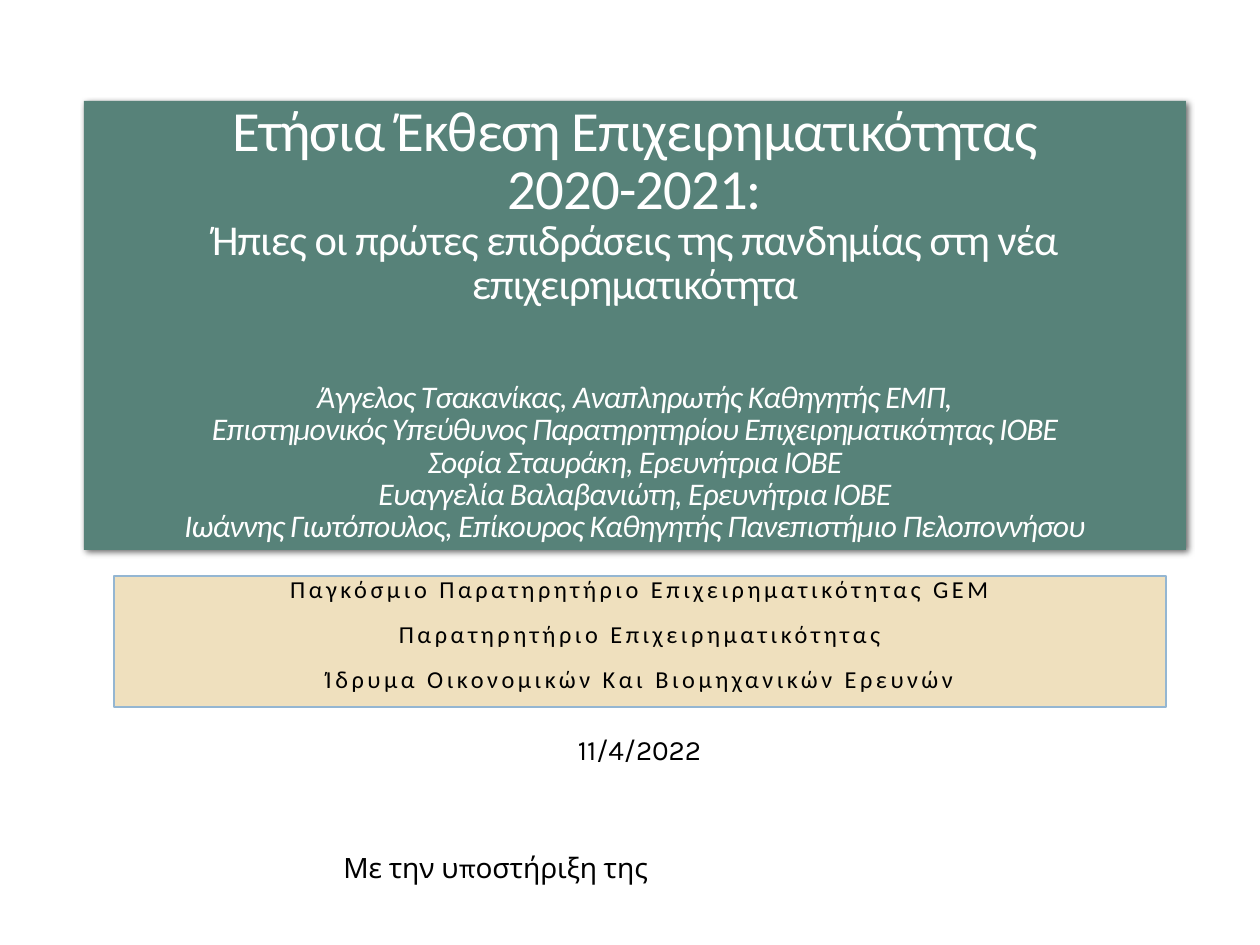
from lxml import etree
from pptx import Presentation
from pptx.dml.color import RGBColor
from pptx.enum.shapes import MSO_SHAPE
from pptx.enum.text import MSO_ANCHOR, PP_ALIGN
from pptx.oxml.ns import qn
from pptx.util import Pt

PX = 914400 // 126
RECT = MSO_SHAPE.RECTANGLE
CENTER, LEFT = PP_ALIGN.CENTER, PP_ALIGN.LEFT
TOP, BOTTOM = MSO_ANCHOR.TOP, MSO_ANCHOR.BOTTOM
COLORS = {"green": "578279", "sand": "EFE0BE", "blue": "94B6D2",
          "white": "FFFFFF", "black": "000000"}

HEADINGS = [
    ("Ετήσια Έκθεση Επιχειρηματικότητας", 32.4),
    ("2020-2021:", 32.4),
    ("Ήπιες οι πρώτες επιδράσεις της πανδημίας στη νέα επιχειρηματικότητα", 24.3),
]
AUTHORS = [
    "Άγγελος Τσακανίκας, Αναπληρωτής Καθηγητής ΕΜΠ,",
    "Επιστημονικός Υπεύθυνος Παρατηρητηρίου Επιχειρηματικότητας ΙΟΒΕ",
    "Σοφία Σταυράκη, Ερευνήτρια ΙΟΒΕ",
    "Ευαγγελία Βαλαβανιώτη, Ερευνήτρια ΙΟΒΕ",
    "Ιωάννης Γιωτόπουλος, Επίκουρος Καθηγητής Πανεπιστήμιο Πελοποννήσου",
]
ORGANISATIONS = [
    "Παγκόσμιο Παρατηρητήριο Επιχειρηματικότητας GEM",
    "Παρατηρητήριο Επιχειρηματικότητας",
    "Ίδρυμα Οικονομικών Και Βιομηχανικών Ερευνών",
]


def rgb(name):
    return RGBColor.from_string(COLORS[name])


def add_panel(s, box, fill, anchor, line=None):
    sp = s.shapes.add_shape(RECT, *(v * PX for v in box))
    sp.shadow.inherit = False
    sp.fill.solid()
    sp.fill.fore_color.rgb = rgb(fill)
    if line:
        sp.line.color.rgb = rgb(line)
        sp.line.width = Pt(1)
    else:
        sp.line.fill.background()
    sp.text_frame.word_wrap = True
    sp.text_frame.vertical_anchor = anchor
    return sp


def add_drop_shadow(sp):
    effects = sp._element.spPr.find(qn("a:effectLst"))
    shadow = etree.SubElement(effects, qn("a:outerShdw"), blurRad=str(Pt(3.5)),
                              dist=str(Pt(2)), dir=str(45 * 60000))
    color = etree.SubElement(shadow, qn("a:srgbClr"), val=COLORS["black"])
    etree.SubElement(color, qn("a:alpha"), val="60000")


def write_line(tf, text, size, color, font="Calibri", tracking=0,
               italic=False, **paragraph_format):
    """Fill the empty first paragraph, or append one; tracking is in points."""
    p = tf.paragraphs[0]
    if p.runs:
        p = tf.add_paragraph()
    for name, value in paragraph_format.items():
        setattr(p, name, value)
    r = p.add_run()
    r.text = text
    values = {"size": Pt(size), "name": font, "italic": italic}
    for name, value in values.items():
        setattr(r.font, name, value)
    r.font.color.rgb = rgb(color)
    if tracking:
        r._r.get_or_add_rPr().set("spc", str(round(tracking * 100)))


def add_title(s, box):
    sp = add_panel(s, box, "green", BOTTOM)
    add_drop_shadow(sp)
    style = {"color": "white", "tracking": -0.5,
             "alignment": CENTER, "line_spacing": 0.85}
    for text, size in HEADINGS:
        write_line(sp.text_frame, text, size, **style)
    for i, text in enumerate(AUTHORS):
        write_line(sp.text_frame, text, 18, italic=True,
                   space_before=Pt(0 if i else 43), **style)


def add_organisations(s, box):
    tf = add_panel(s, box, "sand", TOP, line="blue").text_frame
    for i, text in enumerate(ORGANISATIONS):
        write_line(tf, text, 13.9, "black", tracking=2, alignment=CENTER,
                   line_spacing=0.7, space_before=Pt(12 if i else 0),
                   space_after=Pt(2))


def add_note(s, box, text, alignment, wrap):
    tf = s.shapes.add_textbox(*(v * PX for v in box)).text_frame
    tf.word_wrap = wrap
    write_line(tf, text, 16, "black", font="Karla", alignment=alignment)


def main():
    prs = Presentation()
    prs.slide_width, prs.slide_height = 1260 * PX, 945 * PX
    s = prs.slides.add_slide(prs.slide_layouts[6])
    add_title(s, (84, 101, 1102, 449))
    add_organisations(s, (114, 576, 1052, 131))
    add_note(s, (562, 726, 155, 47), "11/4/2022", CENTER, False)
    add_note(s, (331, 844, 348, 47), "Με την υποστήριξη της", LEFT, True)
    prs.save("out.pptx")


if __name__ == "__main__":
    main()
